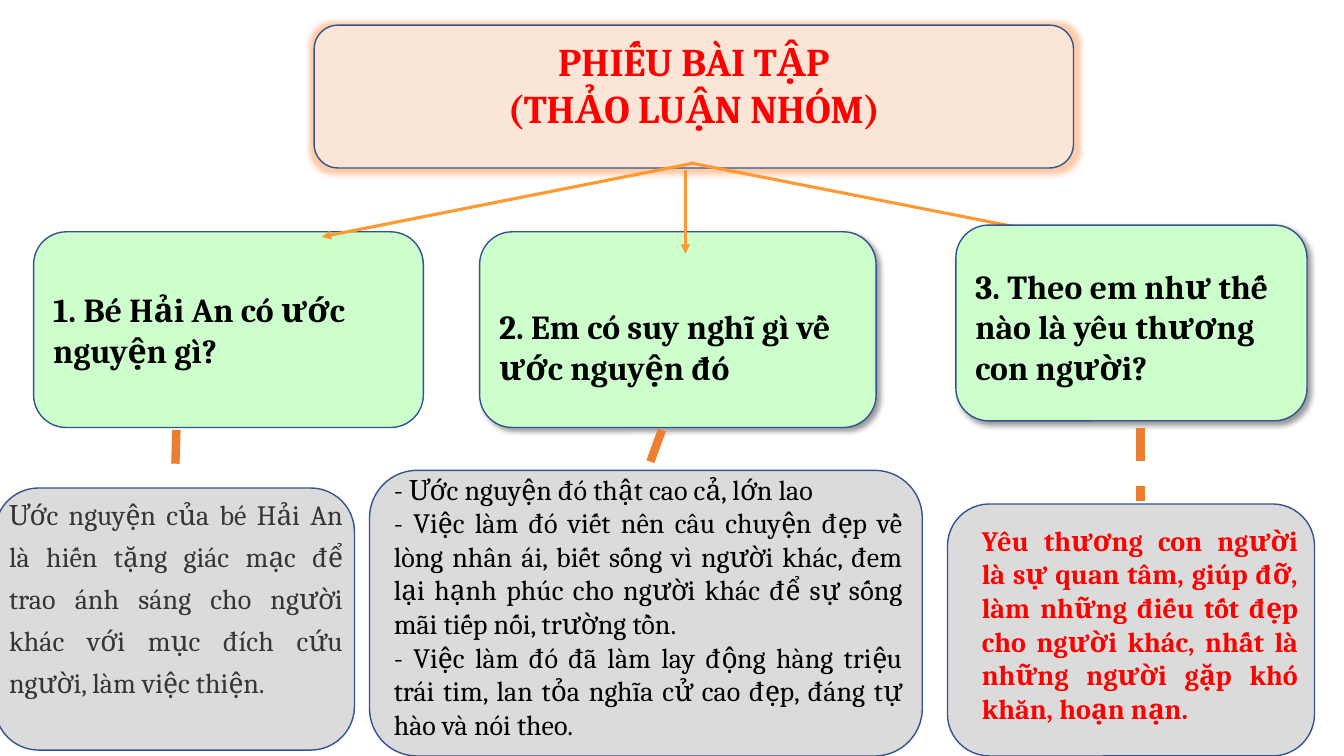
from dataclasses import dataclass

import pptx
import pptx.dml.color
import pptx.enum.dml
import pptx.enum.shapes
import pptx.enum.text
import pptx.oxml
import pptx.oxml.ns
import pptx.util

RGB = pptx.dml.color.RGBColor
ALIGN = pptx.enum.text.PP_ALIGN
ANCHOR = pptx.enum.text.MSO_ANCHOR

PEACH = RGB(0xFB, 0xE5, 0xD6)
MINT = RGB(0xCC, 0xFF, 0xCC)
GREY = RGB(0xDB, 0xDB, 0xDB)
NAVY = RGB(0x32, 0x54, 0x91)
AMBER = RGB(0xFF, 0x99, 0x33)
ORANGE = RGB(0xED, 0x7D, 0x31)
RED = RGB(0xFF, 0x00, 0x00)
BLACK = RGB(0x00, 0x00, 0x00)
CHARCOAL = RGB(0x35, 0x36, 0x35)

FONT = "Cambria"
COLUMNS, ROWS = 160, 90
CELL = pptx.util.Inches(7.5) / ROWS
INSET = 1.2  # side inset of a text frame, in cells

GLOW = (f'<a:glow {pptx.oxml.ns.nsdecls("a")} rad="101600"><a:srgbClr val="FF7F27">'
        '<a:alpha val="40000"/></a:srgbClr></a:glow>')
SHADOW = (f'<a:outerShdw {pptx.oxml.ns.nsdecls("a")} blurRad="50800" dist="38100" '
          'dir="2700000" algn="tl" rotWithShape="0"><a:srgbClr val="000000">'
          '<a:alpha val="40000"/></a:srgbClr></a:outerShdw>')


@dataclass
class Area:
    """A rectangle in grid cells."""
    column: float
    row: float
    columns: float
    rows: float


@dataclass
class Question:
    area: Area
    text: str
    effect: str = ""
    top_inset: float = 0.6


@dataclass
class Answer:
    panel: Area
    text_area: Area
    lines: list[str]
    color: RGB
    bold: bool = False
    spacing: float = 1.0


@dataclass
class Link:
    start: tuple[float, float]
    end: tuple[float, float]


TITLE_AREA = Area(37.4, 3, 90.4, 17)
TITLE = ["PHIẾU BÀI TẬP", "(THẢO LUẬN NHÓM)"]

QUESTIONS = [
    Question(Area(4, 27.6, 46.4, 23.3), "1. Bé Hải An có ước nguyện gì?"),
    Question(Area(57.1, 27.6, 47.2, 23.3), "2. Em có suy nghĩ gì về ước nguyện đó",
             SHADOW, 4.6),
    Question(Area(113.8, 26.8, 41.8, 23.3),
             "3. Theo em như thế nào là yêu thương con người?", SHADOW, 1.4),
]

ANSWERS = [
    Answer(Area(-0.6, 58.1, 42.8, 31.2), Area(-0.1, 57.7, 42.1, 26.4),
           ["Ước nguyện của bé Hải An là hiến tặng giác mạc để trao ánh sáng cho "
            "người khác với mục đích cứu người, làm việc thiện."],
           CHARCOAL, spacing=1.25),
    Answer(Area(44, 56, 65.8, 34), Area(45.7, 55.6, 62.9, 33.5),
           ["- Ước nguyện đó thật cao cả, lớn lao",
            "- Việc làm đó viết nên câu chuyện đẹp về lòng nhân ái, biết sống vì "
            "người khác, đem lại hạnh phúc cho người khác để sự sống mãi tiếp nối, "
            "trường tồn.",
            "- Việc làm đó đã làm lay động hàng triệu trái tim, lan tỏa nghĩa cử "
            "cao đẹp, đáng tự hào và nói theo."],
           BLACK),
    Answer(Area(112.8, 60, 43.7, 30), Area(115.7, 61.7, 40, 25.4),
           ["Yêu thương con người là sự quan tâm, giúp đỡ, làm những điếu tốt đẹp "
            "cho người khác, nhất là những người gặp khó khăn, hoạn nạn."],
           RED, bold=True),
]

RIGHT_ARROW = Link((82.2, 19.4), (131, 29))
FRONT_ARROWS = [Link((82.7, 19.4), (38.3, 28.2)), Link((81.6, 20.2), (81.6, 30.2))]
DASHES = [Link((21, 51.2), (20.8, 58.1)), Link((78.8, 51.2), (77.2, 55.6)),
          Link((135.8, 50.9), (135.8, 59.6))]


def cells(*counts: float) -> list[int]:
    return [round(count * CELL) for count in counts]


def place(area: Area) -> list[int]:
    return cells(area.column, area.row, area.columns, area.rows)


def write(box, lines: list[str], *, size: float, color: RGB, bold: bool = False,
          align=ALIGN.LEFT, anchor=ANCHOR.TOP, spacing: float = 1.0,
          top: float = 0.6, bottom: float = 0.6) -> None:
    frame = box.text_frame
    frame.word_wrap = True
    frame.vertical_anchor = anchor
    frame.margin_left, frame.margin_right = cells(INSET, INSET)
    frame.margin_top, frame.margin_bottom = cells(top, bottom)
    for index, line in enumerate(lines):
        para = frame.add_paragraph() if index else frame.paragraphs[0]
        para.alignment = align
        para.line_spacing = spacing
        span = para.add_run()
        span.text = line
        span.font.name = FONT
        span.font.size = pptx.util.Pt(size)
        span.font.bold = bold
        span.font.color.rgb = color


def add_panel(page, area: Area, fill: RGB, effect: str = ""):
    panel = page.shapes.add_shape(
        pptx.enum.shapes.MSO_SHAPE.ROUNDED_RECTANGLE, *place(area))
    panel.fill.solid()
    panel.fill.fore_color.rgb = fill
    panel.line.color.rgb = NAVY
    panel.line.width = pptx.util.Pt(1)
    panel.shadow.inherit = False
    if effect:
        effects = panel.element.spPr.find(pptx.oxml.ns.qn("a:effectLst"))
        effects.append(pptx.oxml.parse_xml(effect))
    return panel


def add_link(page, link: Link, color: RGB, width: float, *, arrow: bool = False) -> None:
    line = page.shapes.add_connector(
        pptx.enum.shapes.MSO_CONNECTOR.STRAIGHT, *cells(*link.start, *link.end))
    line.line.color.rgb = color
    line.line.width = pptx.util.Pt(width)
    properties = line.element.spPr
    if arrow:
        head = pptx.oxml.parse_xml(
            f'<a:tailEnd {pptx.oxml.ns.nsdecls("a")} type="triangle"/>')
        properties.find(pptx.oxml.ns.qn("a:ln")).append(head)
    else:
        line.line.dash_style = pptx.enum.dml.MSO_LINE.DASH
    properties.append(
        pptx.oxml.parse_xml(f'<a:effectLst {pptx.oxml.ns.nsdecls("a")}/>'))


def main() -> None:
    deck = pptx.Presentation()
    deck.slide_width, deck.slide_height = cells(COLUMNS, ROWS)
    page = deck.slides.add_slide(deck.slide_layouts[6])

    # Title, with the arrow that runs behind the third question
    title = add_panel(page, TITLE_AREA, PEACH, GLOW)
    write(title, TITLE, size=28, color=RED, bold=True, align=ALIGN.CENTER,
          anchor=ANCHOR.MIDDLE, bottom=3.6)
    add_link(page, RIGHT_ARROW, AMBER, 2.25, arrow=True)

    # Questions
    for question in QUESTIONS:
        box = add_panel(page, question.area, MINT, question.effect)
        write(box, [question.text], size=24, color=BLACK, bold=True,
              anchor=ANCHOR.MIDDLE, top=question.top_inset)

    # Links from title to questions and from questions to answers
    for link in FRONT_ARROWS:
        add_link(page, link, AMBER, 2.25, arrow=True)
    for answer in ANSWERS:
        add_panel(page, answer.panel, GREY)
    for link in DASHES:
        add_link(page, link, ORANGE, 6)

    # Answers
    for answer in ANSWERS:
        box = page.shapes.add_textbox(*place(answer.text_area))
        write(box, answer.lines, size=20, color=answer.color, bold=answer.bold,
              align=ALIGN.JUSTIFY, spacing=answer.spacing)

    deck.save("out.pptx")


if __name__ == "__main__":
    main()
